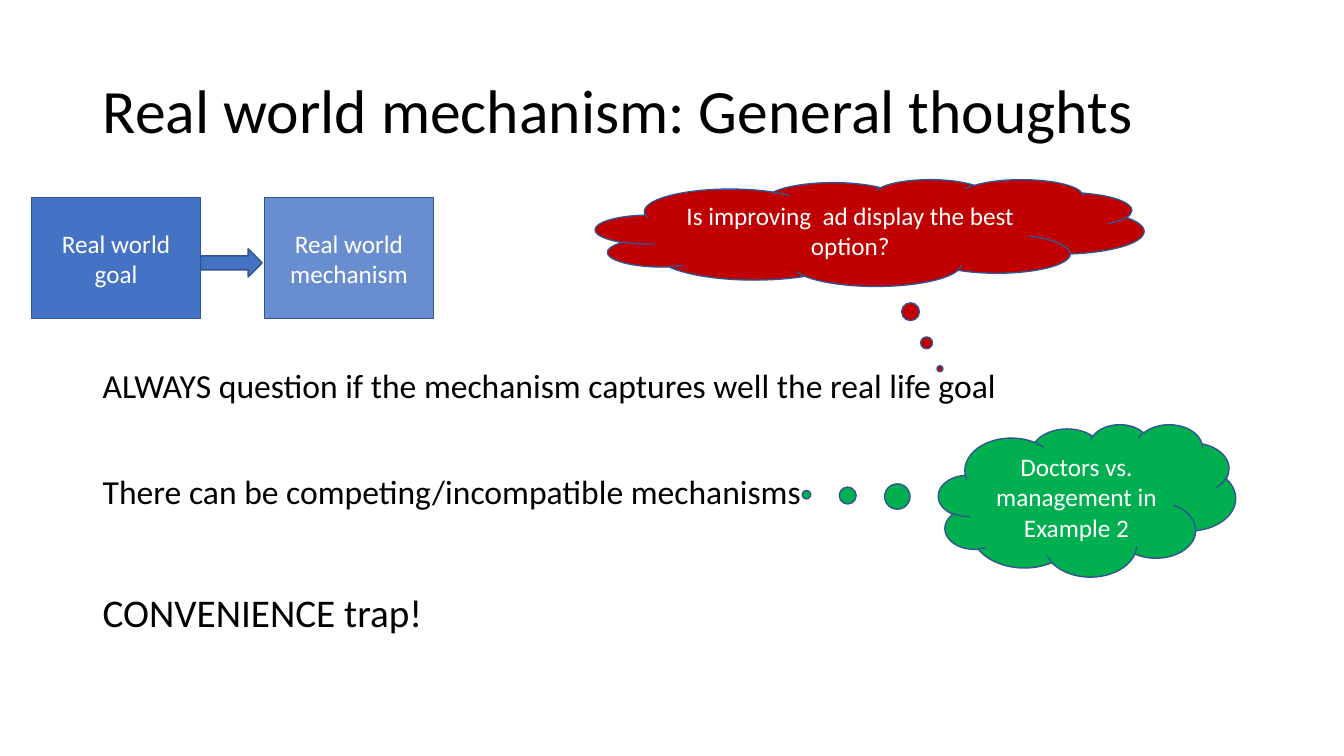
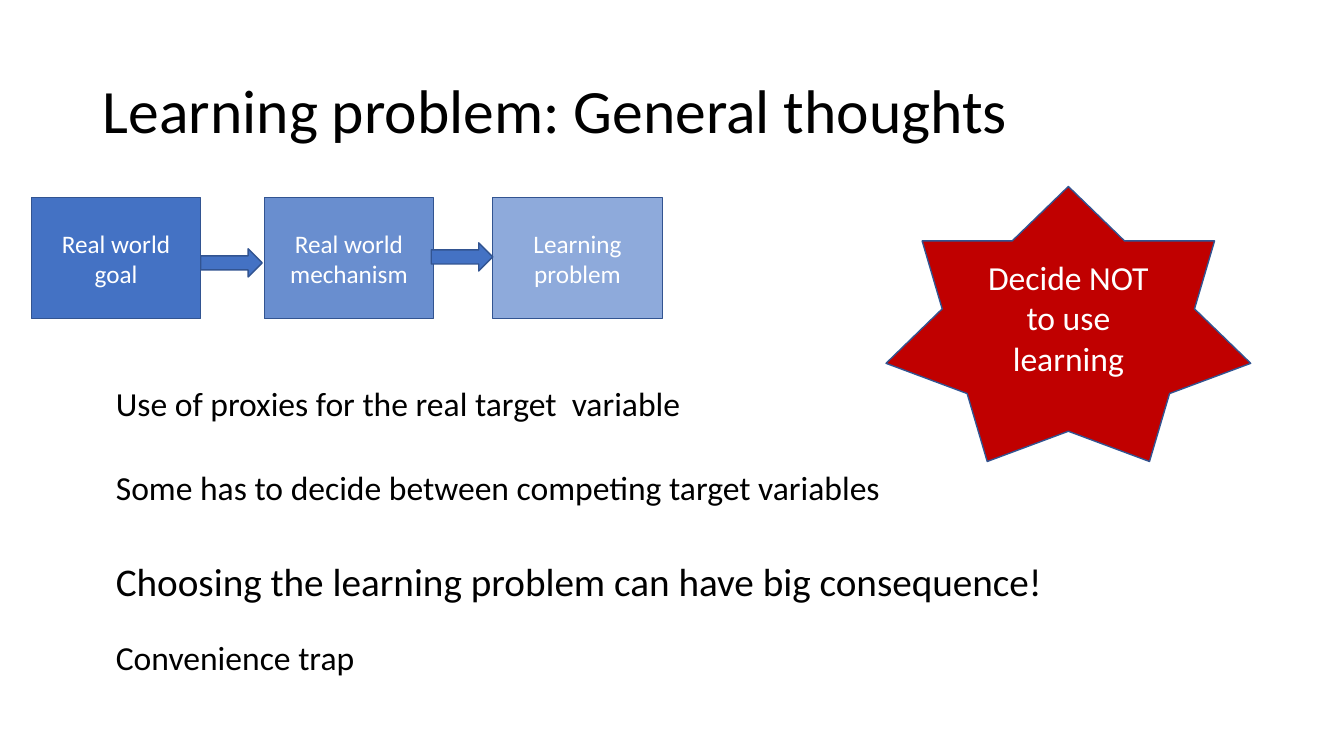
import pptx
import pptx.util
import pptx.dml.color
import pptx.enum.shapes
import pptx.enum.text
import pptx.oxml
import pptx.oxml.ns

Cm = pptx.util.Cm
Kind = pptx.enum.shapes.MSO_SHAPE
Align = pptx.enum.text.PP_ALIGN
Anchor = pptx.enum.text.MSO_ANCHOR
Fit = pptx.enum.text.MSO_AUTO_SIZE

FONT = "Calibri"
BLUE, EDGE, RED, GREEN = "4472C4", "325491", "C00000", "00B050"
WHITE, BLACK = "FFFFFF", "000000"
TITLE = (2.34, 1.02, 29.21, 3.68)
WIDE, HIGH = 4.27, 3.05
STEPS = [("Real world goal", 0, 100), ("Real world mechanism", 5.87, 80),
         ("Learning problem", 11.63, 60)]
ARROWS = [(4.27, 1.29), (10.08, 1.14)]


def color(code):
    """Turn a hex string into a colour."""
    return pptx.dml.color.RGBColor.from_string(code)


def write(frame, text, size=18, ink=WHITE, align=Align.CENTER, anchor=Anchor.MIDDLE, space=None):
    """Put formatted text into a text frame."""
    frame.vertical_anchor = anchor
    para = frame.paragraphs[0]
    para.alignment = align
    para.line_spacing = space
    run = para.add_run()
    run.text = text
    run.font.name = FONT
    run.font.size = pptx.util.Pt(size)
    run.font.color.rgb = color(ink)


def draw(slide, kind, box, fill, text="", size=18, alpha=100, adjust=()):
    """Add an outlined preset shape, with text if any."""
    shape = slide.shapes.add_shape(kind, *map(Cm, box))
    shape.shadow.inherit = False
    shape.fill.solid()
    shape.fill.fore_color.rgb = color(fill)
    if alpha < 100:
        tone = shape.fill._xPr.find(".//" + pptx.oxml.ns.qn("a:srgbClr"))
        node = pptx.oxml.parse_xml(
            f'<a:alpha {pptx.oxml.ns.nsdecls("a")} val="{alpha * 1000}"/>')
        tone.append(node)
    shape.line.color.rgb = color(EDGE)
    shape.line.width = pptx.util.Pt(1)
    for index, value in enumerate(adjust):
        shape.adjustments[index] = value
    if text:
        shape.text_frame.word_wrap = True
        write(shape.text_frame, text, size=size)


def flow(slide, left, top, count):
    """Draw the first steps of the chain and the arrows between them."""
    for text, shift, alpha in STEPS[:count]:
        draw(slide, Kind.RECTANGLE, (left + shift, top, WIDE, HIGH), BLUE, text, alpha=alpha)
    for shift, drop in ARROWS[:count - 1]:
        draw(slide, Kind.RIGHT_ARROW, (left + shift, top + drop, 1.55, 0.71), BLUE)


def notes(slide, left, top, lines):
    """Place one-line statements below a top edge."""
    for text, drop, width, size in lines:
        high = 1.27 if size == 24 else 1.45
        box = slide.shapes.add_textbox(*map(Cm, (left, top + drop, width, high)))
        box.text_frame.word_wrap = False
        box.text_frame.auto_size = Fit.SHAPE_TO_FIT_TEXT
        write(box.text_frame, text, size=size, ink=BLACK, align=Align.LEFT, anchor=Anchor.TOP)


def start(deck, text, count):
    """Add a slide with its title and chain."""
    slide = deck.slides.add_slide(deck.slide_layouts[5])
    title = slide.shapes.title
    title.left, title.top, title.width, title.height = map(Cm, TITLE)
    title.text_frame.auto_size = Fit.NONE
    write(title.text_frame, text, size=44, ink=BLACK, align=Align.LEFT, space=0.9)
    flow(slide, 0.79, 4.98, count)
    return slide


def real(deck):
    """Build the slide on the real world mechanism."""
    slide = start(deck, "Real world mechanism: General thoughts", 2)
    notes(slide, 2.34, 9.07, [
        ("ALWAYS question if the mechanism captures well the real life goal", 0, 23.32, 24),
        ("There can be competing/incompatible mechanisms", 2.66, 18.29, 24),
        ("CONVENIENCE trap!", 5.64, 8.64, 28)])
    draw(slide, Kind.CLOUD_CALLOUT, (15.01, 4.52, 13.82, 2.69), RED,
         "Is improving  ad display the best option?", adjust=(0.128, 1.274))
    draw(slide, Kind.CLOUD_CALLOUT, (23.65, 10.69, 7.49, 3.84), GREEN,
         "Doctors vs. management in Example 2", adjust=(-0.944, -0.037))


def learn(deck):
    """Build the slide on the learning problem."""
    slide = start(deck, "Learning problem: General thoughts", 3)
    notes(slide, 2.67, 9.53, [
        ("Use of proxies for the real target  variable", 0, 14.86, 24),
        ("Some has to decide between competing target variables", 2.1, 19.96, 24),
        ("Choosing the learning problem can have big consequence!", 4.39, 24.1, 28),
        ("Convenience trap", 6.4, 6.58, 24)])
    draw(slide, Kind.STAR_7_POINT, (22.33, 4.7, 9.19, 6.93), RED,
         "Decide NOT to use learning", size=24)


def main():
    """Build and save the deck."""
    deck = pptx.Presentation()
    deck.slide_width, deck.slide_height = Cm(33.87), Cm(19.05)
    real(deck)
    learn(deck)
    deck.save("out.pptx")


if __name__ == "__main__":
    main()
